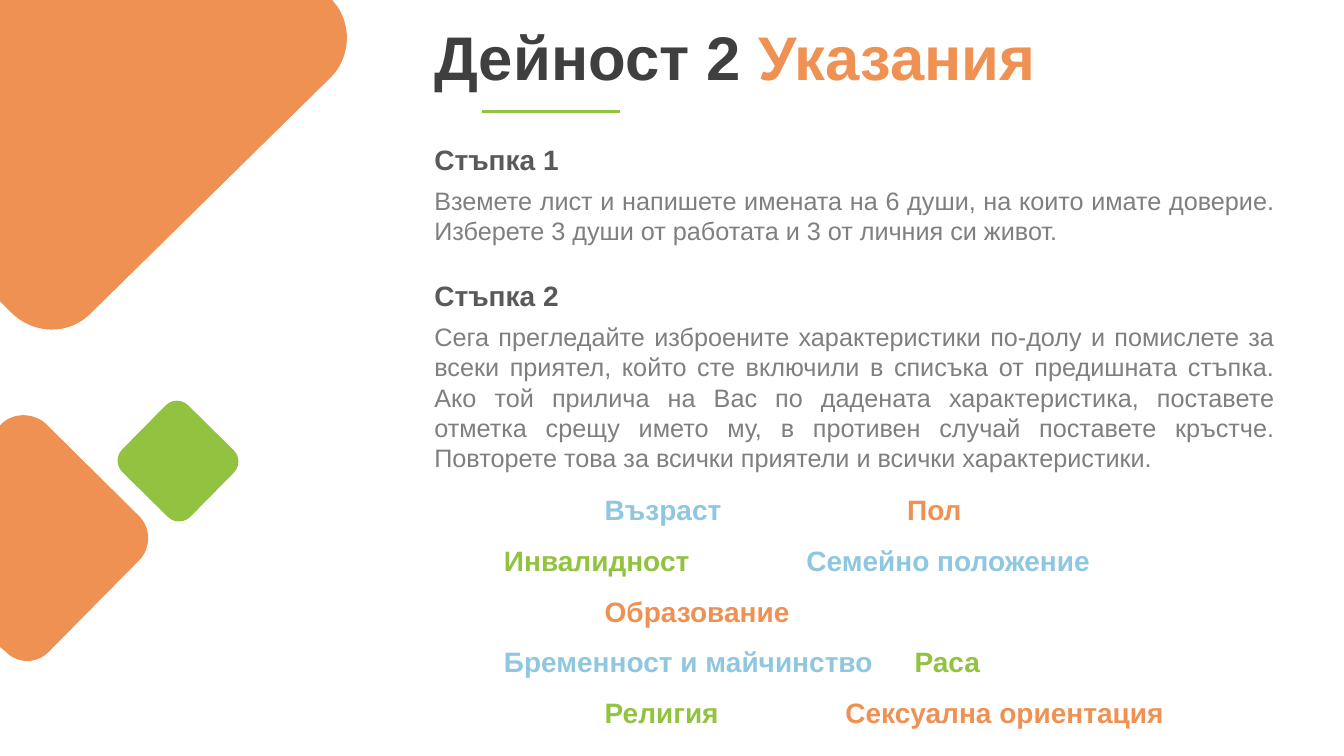
import pptx
import pptx.util
import pptx.dml.color
import pptx.enum.shapes
import pptx.enum.text
import pptx.oxml.ns
from lxml import etree

RGBColor = pptx.dml.color.RGBColor
ORANGE = RGBColor(0xEF, 0x91, 0x52)
GREEN = RGBColor(0x92, 0xC3, 0x40)
BLUE = RGBColor(0x8F, 0xC7, 0xE1)
TITLE_GREY = RGBColor(0x3F, 0x3F, 0x3F)
STEP_GREY = RGBColor(0x59, 0x59, 0x59)
BODY_GREY = RGBColor(0x7F, 0x7F, 0x7F)

FONT = "Arial"
WIDTH = pptx.util.Inches(13.33)
HEIGHT = pptx.util.Inches(7.5)
TEXT_LEFT = 31.58
BODY_WIDTH = 64
BODY_DROP = 5.74
CURVE_STEPS = 16

LARGE_CORNER = [
    [(0, 0)], [(24.72, 0)], [(25.13, 0.93)],
    [(26.18, 3.73), (26.03, 7.73), (24.6, 10.27)],
    [(6.75, 41.47)],
    [(5.1, 44.4), (2.48, 44.27), (0.83, 41.33)],
    [(0, 39.87)],
]
SMALL_CORNER = [
    [(1.73, 54.93)],
    [(2.33, 54.93), (3, 55.33), (3.45, 56.13)],
    [(10.35, 68.27)],
    [(11.25, 69.87), (11.25, 72.53), (10.35, 74.13)],
    [(3.68, 86.13)],
    [(2.78, 87.87), (1.28, 87.87), (0.38, 86.13)],
    [(0, 85.6)], [(0, 56.27)], [(0.08, 56.13)],
    [(0.53, 55.33), (1.13, 54.93), (1.73, 54.93)],
]

STEPS = [
    (18.13, 23.73, "Стъпка 1",
     "Вземете лист и напишете имената на 6 души, на които имате доверие. "
     "Изберете 3 души от работата и 3 от личния си живот."),
    (36.13, 34.53, "Стъпка 2",
     "Сега прегледайте изброените характеристики по-долу и помислете за всеки "
     "приятел, който сте включили в списъка от предишната стъпка. Ако той "
     "прилича на Вас по дадената характеристика, поставете отметка срещу името "
     "му, в противен случай поставете кръстче. Повторете това за всички "
     "приятели и всички характеристики."),
]

CHARACTERISTICS = [
    ([7.5, 30], [("\t", BLUE, 24), ("Възраст", BLUE, 20), ("\tПол", ORANGE, 20)]),
    ([22.5], [("Инвалидност", GREEN, 20), ("\tСемейно положение", BLUE, 20)]),
    ([7.5], [("\tОбразование", ORANGE, 20)]),
    ([30.55], [("Бременност и майчинство", BLUE, 20), ("\tРаса", GREEN, 20)]),
    ([7.5, 25.4], [("\tРелигия", GREEN, 20),
                   ("\tСексуална ориентация", ORANGE, 20)]),
]


def across(share):
    return round(WIDTH * share / 100)


def down(share):
    return round(HEIGHT * share / 100)


def paint(shape, color):
    shape.fill.solid()
    shape.fill.fore_color.rgb = color
    shape.line.fill.background()
    shape.shadow.inherit = False


def curve_points(start, bends):
    controls = [start, *bends]
    weights = (1, 3, 3, 1)
    for step in range(1, CURVE_STEPS + 1):
        t = step / CURVE_STEPS
        factors = [w * (1 - t) ** (3 - i) * t ** i for i, w in enumerate(weights)]
        yield tuple(sum(f * point[axis] for f, point in zip(factors, controls))
                    for axis in (0, 1))


def add_corner(slide, outline, color):
    points = list(outline[0])
    for segment in outline[1:]:
        points.extend(segment if len(segment) == 1
                      else list(curve_points(points[-1], segment)))
    corners = [(across(x), down(y)) for x, y in points]
    builder = slide.shapes.build_freeform(*corners[0])
    builder.add_line_segments(corners[1:], close=True)
    paint(builder.convert_to_shape(), color)


def add_diamond(slide, left, top, width, height, color):
    diamond = slide.shapes.add_shape(
        pptx.enum.shapes.MSO_SHAPE.ROUNDED_RECTANGLE,
        across(left), down(top), across(width), down(height))
    diamond.adjustments[0] = 0.17
    diamond.rotation = 44.6
    paint(diamond, color)


def add_underline(slide, start, end, level, color):
    underline = slide.shapes.add_connector(
        pptx.enum.shapes.MSO_CONNECTOR.STRAIGHT,
        across(start), down(level), across(end), down(level))
    underline.line.color.rgb = color
    underline.line.width = pptx.util.Pt(2.25)
    etree.SubElement(underline._element.spPr, pptx.oxml.ns.qn("a:effectLst"))


def add_frame(slide, left, top, width, height):
    frame = slide.shapes.add_textbox(
        across(left), down(top), across(width), down(height)).text_frame
    frame.word_wrap = True
    return frame


def add_words(paragraph, words, size, color, bold):
    run = paragraph.add_run()
    run.text = words
    run.font.name = FONT
    run.font.size = pptx.util.Pt(size)
    run.font.bold = bold
    run.font.color.rgb = color


def set_tabs(paragraph, stops):
    tabs = etree.SubElement(paragraph._p.get_or_add_pPr(),
                            pptx.oxml.ns.qn("a:tabLst"))
    for stop in stops:
        etree.SubElement(tabs, pptx.oxml.ns.qn("a:tab"),
                         pos=str(across(stop)), algn="l")


def add_title(slide):
    title = add_frame(slide, TEXT_LEFT, 1.87, 52.51, 19.47).paragraphs[0]
    add_words(title, "Дейност 2 ", 44, TITLE_GREY, True)
    add_words(title, "Указания", 44, ORANGE, True)


def add_step(slide, top, body_height, heading, instruction):
    label = add_frame(slide, TEXT_LEFT, top, 11.55, 4.27).paragraphs[0]
    add_words(label, heading, 20, STEP_GREY, True)
    body = add_frame(slide, TEXT_LEFT, top + BODY_DROP,
                     BODY_WIDTH, body_height).paragraphs[0]
    body.alignment = pptx.enum.text.PP_ALIGN.JUSTIFY
    add_words(body, instruction, 18, BODY_GREY, False)


def add_characteristics(slide):
    frame = add_frame(slide, 36.76, 61.07, 60.17, 37.07)
    for index, (stops, words) in enumerate(CHARACTERISTICS):
        row = frame.add_paragraph() if index else frame.paragraphs[0]
        row.line_spacing = 1.5
        set_tabs(row, stops)
        for text, color, size in words:
            add_words(row, text, size, color, True)


def main():
    deck = pptx.Presentation()
    deck.slide_width = WIDTH
    deck.slide_height = HEIGHT
    slide = deck.slides.add_slide(deck.slide_layouts[6])
    add_corner(slide, LARGE_CORNER, ORANGE)
    add_corner(slide, SMALL_CORNER, ORANGE)
    add_diamond(slide, 9.68, 54.8, 7.13, 12.4, GREEN)
    add_title(slide)
    add_underline(slide, 35.86, 46.14, 14.8, GREEN)
    for step in STEPS:
        add_step(slide, *step)
    add_characteristics(slide)
    deck.save("out.pptx")


if __name__ == "__main__":
    main()
